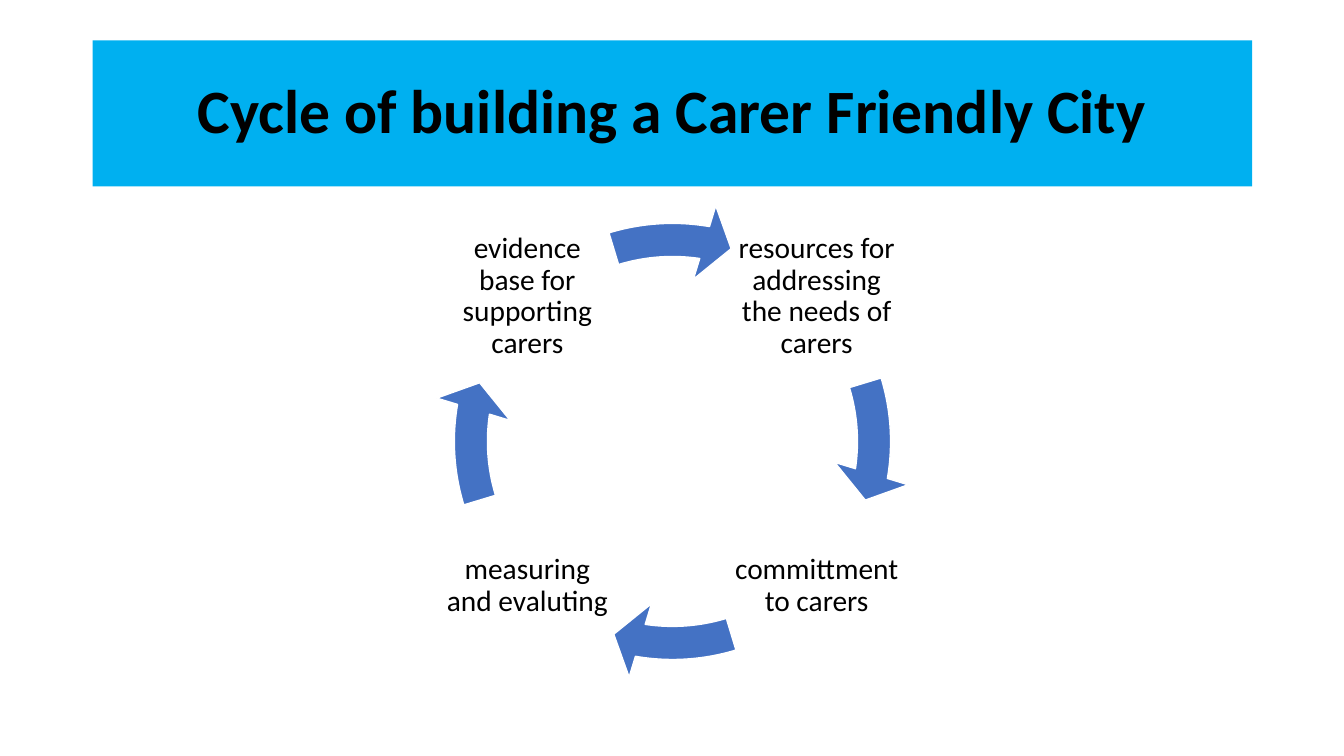
from dataclasses import dataclass

from pptx import Presentation
from pptx.dml.color import RGBColor
from pptx.enum import shapes, text
from pptx.util import Inches, Pt

BLACK = RGBColor(0x00, 0x00, 0x00)
WHITE = RGBColor(0xFF, 0xFF, 0xFF)
SKY = RGBColor(0x00, 0xB0, 0xF0)
BLUE = RGBColor(0x44, 0x72, 0xC4)

LEFT, RIGHT, TOP, BOTTOM = 4.39, 7.26, 2.1, 4.97
STAGE_SIZE = 1.68
# Arrow angles are in units of 100000/60000 degree: 216 make a full turn.
FULL_TURN = 216
QUARTER_TURN = FULL_TURN / 4
ARROW_END, ARROW_START = 5.504, 205.845


@dataclass(frozen=True)
class Stage:
    label: str
    left: float
    top: float


STAGES = [
    Stage("resources for addressing the needs of carers", RIGHT, TOP),
    Stage("committment to carers", RIGHT, BOTTOM),
    Stage("measuring and evaluting", LEFT, BOTTOM),
    Stage("evidence base for supporting carers", LEFT, TOP),
]


def write_centred(shape, wording: str, size: float, bold: bool = False) -> None:
    frame = shape.text_frame
    frame.word_wrap = True
    frame.vertical_anchor = text.MSO_ANCHOR.MIDDLE
    para = frame.paragraphs[0]
    para.text = wording
    para.alignment = text.PP_ALIGN.CENTER
    para.line_spacing = 0.9
    para.font.name = "Calibri"
    para.font.size = Pt(size)
    para.font.bold = bold
    para.font.color.rgb = BLACK


def add_title(page, wording: str) -> None:
    banner = page.shapes.add_shape(
        shapes.MSO_SHAPE.RECTANGLE, Inches(0.92), Inches(0.4), Inches(11.5), Inches(1.45)
    )
    banner.shadow.inherit = False
    banner.fill.solid()
    banner.fill.fore_color.rgb = SKY
    banner.line.fill.background()
    write_centred(banner, wording, 44, bold=True)


def add_stage(page, stage: Stage) -> None:
    box = page.shapes.add_textbox(
        Inches(stage.left), Inches(stage.top), Inches(STAGE_SIZE), Inches(STAGE_SIZE)
    )
    frame = box.text_frame
    frame.margin_left = frame.margin_right = Inches(0.03)
    frame.margin_top = frame.margin_bottom = Inches(0.03)
    write_centred(box, stage.label, 21)


def add_arrow(page, quarter: int) -> None:
    """Draw the arc leaving the given stage, turned by that many quarters."""
    arrow = page.shapes.add_shape(
        shapes.MSO_SHAPE.CIRCULAR_ARROW, Inches(4.29), Inches(2), Inches(4.76), Inches(4.76)
    )
    turn = quarter * QUARTER_TURN
    settings = (0.069, 4.651, ARROW_END + turn, (ARROW_START + turn) % FULL_TURN, 0.08)
    for index, value in enumerate(settings):
        arrow.adjustments[index] = value
    arrow.shadow.inherit = False
    arrow.fill.solid()
    arrow.fill.fore_color.rgb = BLUE
    arrow.line.color.rgb = WHITE
    arrow.line.width = Pt(1)


def main() -> None:
    deck = Presentation()
    deck.slide_width, deck.slide_height = Inches(13.33), Inches(7.5)
    page = deck.slides.add_slide(deck.slide_layouts[6])
    add_title(page, "Cycle of building a Carer Friendly City")
    for quarter, stage in enumerate(STAGES):
        add_stage(page, stage)
        add_arrow(page, quarter)
    deck.save("out.pptx")


if __name__ == "__main__":
    main()
